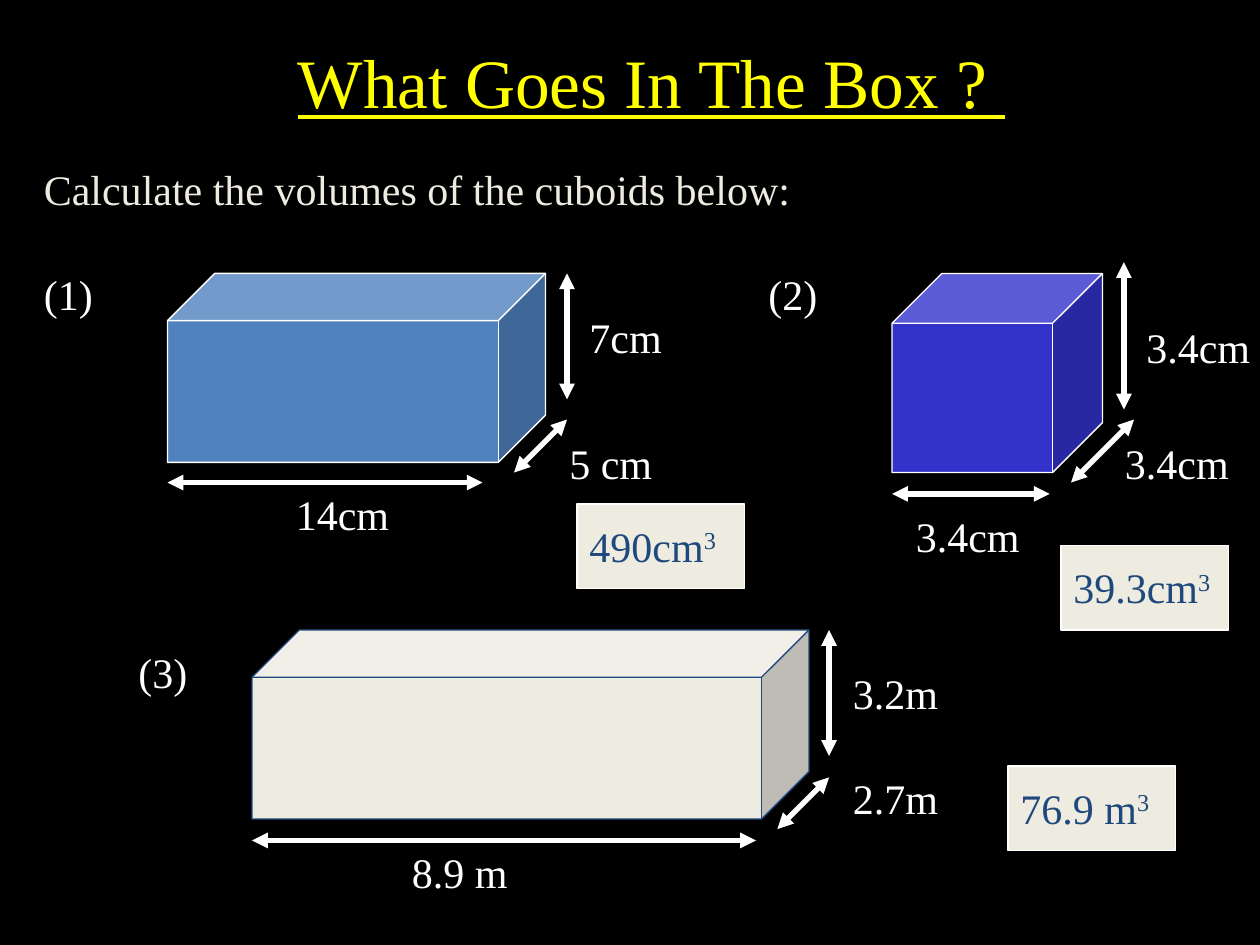
"""Build a worksheet slide asking for the volumes of three cuboids."""
from dataclasses import dataclass

import pptx
import pptx.dml.color
import pptx.enum.shapes
import pptx.enum.text
import pptx.oxml.ns
import pptx.shapes.autoshape
import pptx.shapes.shapetree
import pptx.text.text
import pptx.util
from lxml import etree

Inches = pptx.util.Inches
Pt = pptx.util.Pt
Shape = pptx.enum.shapes.MSO_SHAPE

FONT = "Times New Roman"
COLORS = {
    "background": "000000",
    "title": "FFFF00",
    "white": "FFFFFF",
    "cream": "EEECE1",
    "navy": "1F497D",
    "blue": "4F81BD",
    "violet": "3333CC",
}


@dataclass
class Label:
    """A line of text at a position in inches."""
    text: str
    left: float
    top: float
    width: float


@dataclass
class Arrow:
    """A double-headed arrow between two points in inches."""
    x1: float
    y1: float
    x2: float
    y2: float


@dataclass
class Cuboid:
    """A cube shape with its number, dimensions and arrows."""
    box: tuple[float, float, float, float]
    fill: str
    line: str
    labels: list[Label]
    arrows: list[Arrow]


@dataclass
class Answer:
    """A boxed volume in cubic units."""
    volume: str
    left: float
    top: float
    text_width: float


CUBOIDS = [
    Cuboid((1.33, 2.17, 3, 1.5), "blue", "white",
           [Label("(1)", 0.25, 2.08, 0.75), Label("14cm", 2.25, 3.83, 1),
            Label("5 cm", 4.42, 3.42, 1.25), Label("7cm", 4.58, 2.42, 1.17)],
           [Arrow(1.33, 3.83, 3.83, 3.83), Arrow(4.08, 3.75, 4.5, 3.33),
            Arrow(4.5, 3.17, 4.5, 2.17)]),
    Cuboid((7.08, 2.17, 1.67, 1.58), "violet", "white",
           [Label("(2)", 6, 2.08, 0.67), Label("3.4cm", 7.17, 4, 1.17),
            Label("3.4cm", 8.83, 3.42, 1.17), Label("3.4cm", 9, 2.5, 1.17)],
           [Arrow(7.08, 3.92, 8.33, 3.92), Arrow(8.5, 3.83, 9, 3.33),
            Arrow(8.92, 3.25, 8.92, 2.08)]),
    Cuboid((2, 5, 4.42, 1.5), "cream", "navy",
           [Label("(3)", 1, 5.08, 0.83), Label("8.9 m", 3.17, 6.67, 1.33),
            Label("2.7m", 6.67, 6.08, 0.92), Label("3.2m", 6.67, 5.25, 0.92)],
           [Arrow(2, 6.67, 6, 6.67), Arrow(6.17, 6.58, 6.58, 6.17),
            Arrow(6.58, 6, 6.58, 5)]),
]
ANSWERS = [
    Answer("490cm", 4.58, 4, 1.25),
    Answer("39.3cm", 8.42, 4.33, 1.58),
    Answer("76.9 m", 8, 6.08, 1.58),
]


def rgb(name: str) -> pptx.dml.color.RGBColor:
    """Look up a named colour."""
    return pptx.dml.color.RGBColor.from_string(COLORS[name])


def format_run(r: pptx.text.text._Run, color: str, size: float = 24) -> None:
    """Set the font, size and colour of a run."""
    r.font.name = FONT
    r.font.size = Pt(size)
    r.font.color.rgb = rgb(color)


def add_label(shapes: pptx.shapes.shapetree._BaseGroupShapes, label: Label,
              color: str = "white") -> pptx.text.text._Paragraph:
    """Add a text box and return its paragraph."""
    tb = shapes.add_textbox(Inches(label.left), Inches(label.top),
                            Inches(label.width), Inches(0.5))
    tf = tb.text_frame
    tf.word_wrap = True
    tf.auto_size = pptx.enum.text.MSO_AUTO_SIZE.SHAPE_TO_FIT_TEXT
    tf.text = label.text
    p = tf.paragraphs[0]
    format_run(p.runs[0], color)
    return p


def add_solid(shapes: pptx.shapes.shapetree._BaseGroupShapes, kind: Shape,
              box: tuple[float, float, float, float], fill: str,
              line: str) -> pptx.shapes.autoshape.Shape:
    """Add a filled and outlined preset shape."""
    sp = shapes.add_shape(kind, *map(Inches, box))
    sp.shadow.inherit = False
    sp.fill.solid()
    sp.fill.fore_color.rgb = rgb(fill)
    sp.line.color.rgb = rgb(line)
    sp.line.width = Pt(0.75)
    return sp


def add_arrow(shapes: pptx.shapes.shapetree._BaseGroupShapes,
              arrow: Arrow) -> None:
    """Add a double-headed dimension arrow."""
    cxn = shapes.add_connector(
        pptx.enum.shapes.MSO_CONNECTOR.STRAIGHT, Inches(arrow.x1),
        Inches(arrow.y1), Inches(arrow.x2), Inches(arrow.y2))
    cxn.line.color.rgb = rgb("white")
    cxn.line.width = Pt(3)
    ln = cxn.line._get_or_add_ln()
    for end in ("a:headEnd", "a:tailEnd"):
        etree.SubElement(ln, pptx.oxml.ns.qn(end), type="triangle")
    etree.SubElement(cxn._element.spPr, pptx.oxml.ns.qn("a:effectLst"))


def add_cuboid(shapes: pptx.shapes.shapetree.SlideShapes,
               cuboid: Cuboid) -> None:
    """Add a cuboid with its labels and arrows as one group."""
    group = shapes.add_group_shape().shapes
    sp = add_solid(group, Shape.CUBE, cuboid.box, cuboid.fill, cuboid.line)
    sp.adjustments[0] = 0.25
    for label in cuboid.labels:
        add_label(group, label)
    for arrow in cuboid.arrows:
        add_arrow(group, arrow)


def add_answer(shapes: pptx.shapes.shapetree.SlideShapes,
               answer: Answer) -> None:
    """Add a box holding a volume with a raised exponent."""
    add_solid(shapes, Shape.RECTANGLE, (answer.left, answer.top, 1.33, 0.67),
              "cream", "white")
    p = add_label(shapes, Label(answer.volume, answer.left, answer.top + 0.08,
                                answer.text_width), "navy")
    r = p.add_run()
    r.text = "3"
    format_run(r, "navy")
    r.font._element.set("baseline", "30000")


def main() -> None:
    """Build and save the slide."""
    prs = pptx.Presentation()
    prs.slide_width, prs.slide_height = Inches(10), Inches(7.5)
    s = prs.slides.add_slide(prs.slide_layouts.get_by_name("Title Only"))
    s.background.fill.solid()
    s.background.fill.fore_color.rgb = rgb("background")

    title = s.shapes.title
    title.left, title.top = Inches(0.92), Inches(0.27)
    title.width, title.height = Inches(8.5), Inches(0.75)
    tf = title.text_frame
    tf.text = "What Goes In The Box ? "
    tf.vertical_anchor = pptx.enum.text.MSO_ANCHOR.MIDDLE
    p = tf.paragraphs[0]
    p.alignment = pptx.enum.text.PP_ALIGN.CENTER
    format_run(p.runs[0], "title", 39.6)
    p.runs[0].font.underline = True

    add_label(s.shapes, Label("Calculate the volumes of the cuboids below:",
                              0.25, 1.25, 6.42), "cream")
    for cuboid in CUBOIDS:
        add_cuboid(s.shapes, cuboid)
    for answer in ANSWERS:
        add_answer(s.shapes, answer)
    prs.save("out.pptx")


if __name__ == "__main__":
    main()
